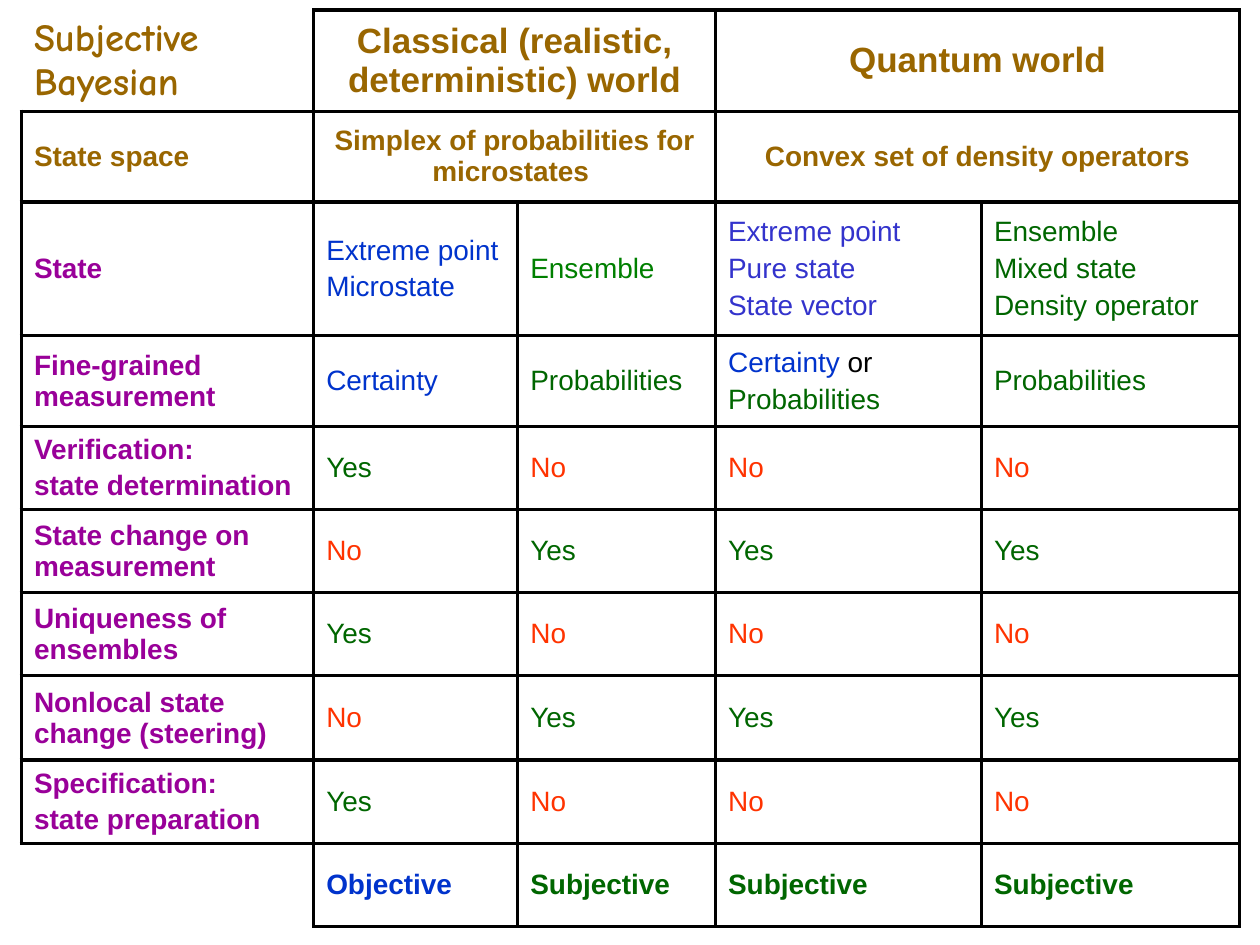
from lxml import etree
from pptx import Presentation
from pptx.dml.color import RGBColor
from pptx.enum.text import MSO_ANCHOR, PP_ALIGN
from pptx.oxml.ns import qn
from pptx.util import Inches, Pt

MIDDLE = MSO_ANCHOR.MIDDLE
CENTER = PP_ALIGN.CENTER

BROWN = RGBColor(0x99, 0x66, 0x00)
PURPLE = RGBColor(0x99, 0x00, 0x99)
BLUE = RGBColor(0x00, 0x33, 0xCC)
INDIGO = RGBColor(0x33, 0x33, 0xCC)
LIME = RGBColor(0x00, 0x80, 0x00)
GREEN = RGBColor(0x00, 0x66, 0x00)
RED = RGBColor(0xFF, 0x33, 0x00)
BLACK = RGBColor(0x00, 0x00, 0x00)

WIDTHS = [2.32, 1.62, 1.57, 2.11, 2.05]
HEIGHTS = [0.8, 0.72, 1.06, 0.72, 0.66, 0.66, 0.66, 0.67, 0.66, 0.66]

YES, NO = ("Yes", GREEN), ("No", RED)
CHANCE = ("Probabilities", GREEN)
OPEN = ("Subjective", GREEN)

# Each cell is its text and colour; None is covered by a merge or empty
ROWS = [
    [("Subjective Bayesian", BROWN),
     ("Classical (realistic, deterministic) world", BROWN), None,
     ("Quantum world", BROWN), None],
    [("State space", BROWN),
     ("Simplex of probabilities for microstates ", BROWN), None,
     ("Convex set of density operators", BROWN), None],
    [("State", PURPLE),
     ("Extreme point\nMicrostate", BLUE),
     ("Ensemble", LIME),
     ("Extreme point\nPure state\nState vector", INDIGO),
     ("Ensemble\nMixed state\nDensity operator", GREEN)],
    [("Fine-grained measurement", PURPLE),
     ("Certainty", BLUE), CHANCE, ("Certainty \nProbabilities", GREEN), CHANCE],
    [("Verification:\nstate determination", PURPLE), YES, NO, NO, NO],
    [("State change on measurement", PURPLE), NO, YES, YES, YES],
    [("Uniqueness of ensembles", PURPLE), YES, NO, NO, NO],
    [("Nonlocal state change (steering)", PURPLE), NO, YES, YES, YES],
    [("Specification:\nstate preparation", PURPLE), YES, NO, NO, NO],
    [None, ("Objective", BLUE), OPEN, OPEN, OPEN],
]
LAST = len(ROWS) - 1


def set_font(run, color, size=16, bold=False, name="Arial"):
    font = run.font
    font.name, font.size, font.bold = name, Pt(size), bold
    font.color.rgb = color


def set_edges(cell, sides):
    props = cell._tc.get_or_add_tcPr()
    for side in "LRTB":
        line = etree.SubElement(props, qn("a:ln" + side), w=str(Pt(2.25)))
        if side in sides:
            fill = etree.SubElement(line, qn("a:solidFill"))
            etree.SubElement(fill, qn("a:srgbClr"), val=str(BLACK))
        else:
            etree.SubElement(line, qn("a:noFill"))


prs = Presentation()
prs.slide_width, prs.slide_height = Inches(10), Inches(7.5)
slide = prs.slides.add_slide(prs.slide_layouts[6])

# Table grid
table = slide.shapes.add_table(
    len(HEIGHTS), len(WIDTHS), Inches(0.17), Inches(0.08),
    Inches(sum(WIDTHS)), Inches(sum(HEIGHTS))).table
table.first_row = table.horz_banding = False
for col, width in zip(table.columns, WIDTHS):
    col.width = Inches(width)
for row, height in zip(table.rows, HEIGHTS):
    row.height = Inches(height)

# The two world headings span two columns each
for r in (0, 1):
    for c in (1, 3):
        table.cell(r, c).merge(table.cell(r, c + 1))

# Borders, open at the two left corners, and cell text
CORNERS = {(0, 0): "RB", (LAST, 0): "TR"}
for r, items in enumerate(ROWS):
    for c, item in enumerate(items):
        cell = table.cell(r, c)
        set_edges(cell, CORNERS.get((r, c), "LRTB"))
        cell.fill.background()
        if item is None:
            continue
        text, color = item
        size = 20 if r == 0 else 16
        name = "Arial"
        if (r, c) == (0, 0):
            size, name = 22, "Comic Neue"
        cell.vertical_anchor = MIDDLE
        cell.text_frame.text = text
        for para in cell.text_frame.paragraphs:
            para.space_before = Pt(size * 0.2)
            if r < 2 and c > 0:
                para.alignment = CENTER
            set_font(para.runs[0], color, size,
                     c == 0 or r in (0, 1, LAST), name)

# Mixed colours in the pure quantum state's measurement
para = table.cell(3, 3).text_frame.paragraphs[0]
para.runs[0].font.color.rgb = BLUE
run = para.add_run()
run.text = "or"
set_font(run, BLACK)

prs.save("out.pptx")
